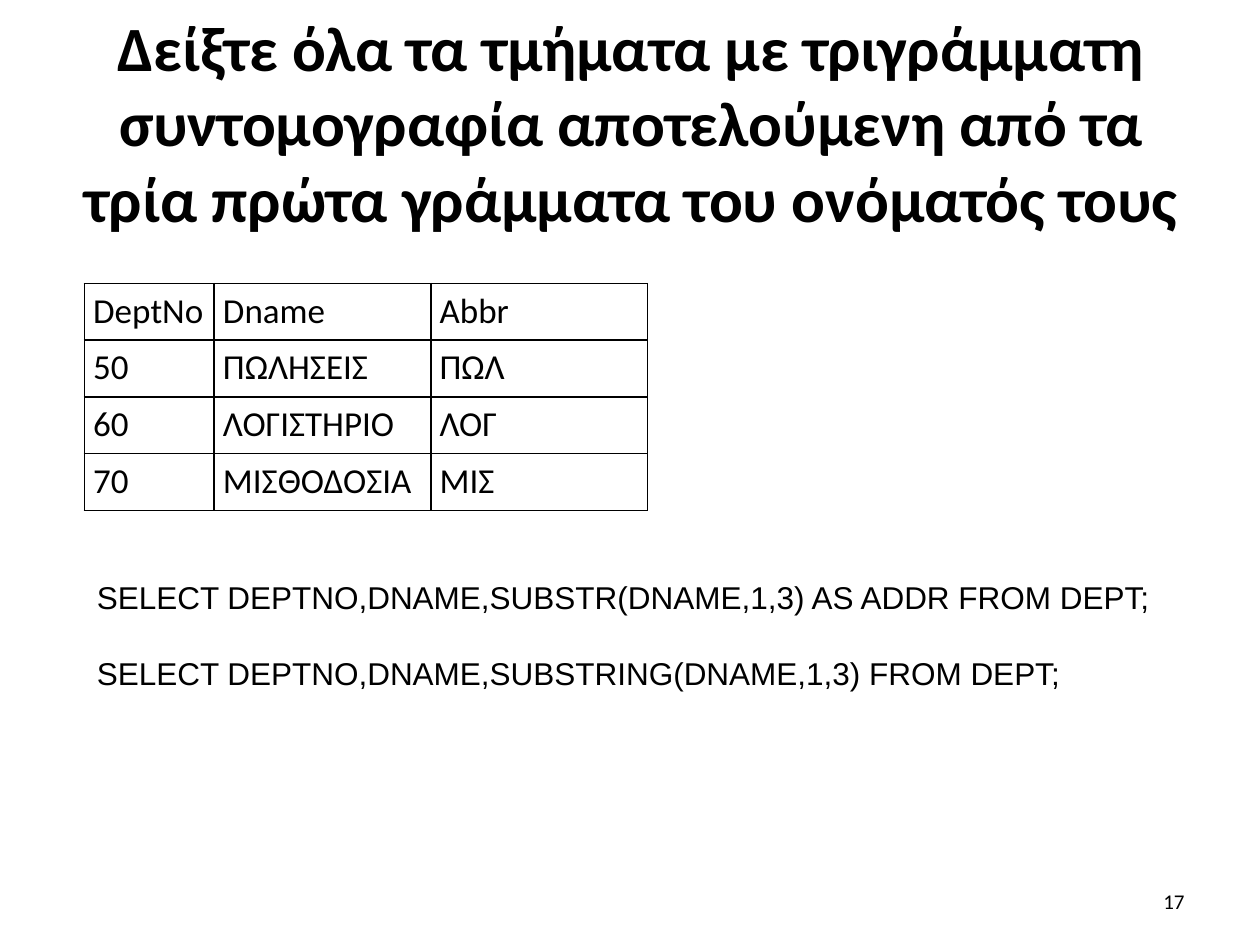
from pptx import Presentation
from pptx.dml.color import RGBColor
from pptx.enum.text import MSO_ANCHOR, PP_ALIGN
from pptx.oxml import parse_xml
from pptx.oxml.ns import nsdecls
from pptx.util import Inches, Pt

LEFT, CENTER, RIGHT = PP_ALIGN.LEFT, PP_ALIGN.CENTER, PP_ALIGN.RIGHT
TOP, MIDDLE = MSO_ANCHOR.TOP, MSO_ANCHOR.MIDDLE

THEME = {
    "ink": "000000",
    "body_font": "Calibri",
    "code_font": "Arial",
    "title": 36,
    "table": 20,
    "code": 18,
    "number": 12,
}

deck = Presentation()
deck.slide_width, deck.slide_height = Inches(10), Inches(7.5)
page = deck.slides.add_slide(deck.slide_layouts[6])


def area(left, top, width, height):
    """Turn percentages of the slide into lengths."""
    across, down = deck.slide_width / 100, deck.slide_height / 100
    return int(left * across), int(top * down), int(width * across), int(height * down)


def write(frame, lines, size, font="body_font", align=LEFT, bold=False, gap=0):
    for index, line in enumerate(lines):
        para = frame.add_paragraph() if index else frame.paragraphs[0]
        para.text = line
        para.alignment = align
        para.space_before = Pt(gap if index else 0)
        para.font.name = THEME[font]
        para.font.size = Pt(THEME[size])
        para.font.bold = bold
        para.font.color.rgb = RGBColor.from_string(THEME["ink"])


# Title, SQL statements and page number
title = ["Δείξτε όλα τα τμήματα με τριγράμματη συντομογραφία "
         "αποτελούμενη από τα τρία πρώτα γράμματα του ονόματός τους"]
queries = ["SELECT DEPTNO,DNAME,SUBSTR(DNAME,1,3) AS ADDR FROM DEPT;",
           "SELECT DEPTNO,DNAME,SUBSTRING(DNAME,1,3) FROM DEPT;"]
texts = [
    (area(5.1, 6.27, 90, 13.2), MIDDLE, title,
     {"size": "title", "align": CENTER, "bold": True}),
    (area(6.7, 60.53, 87.4, 13.47), TOP, queries,
     {"size": "code", "font": "code_font", "gap": 22}),
    (area(71.7, 92.67, 23.3, 5.33), MIDDLE, ["17"],
     {"size": "number", "align": RIGHT}),
]
for place, anchor, lines, style in texts:
    frame = page.shapes.add_textbox(*place).text_frame
    frame.word_wrap = True
    frame.vertical_anchor = anchor
    write(frame, lines, **style)

# Departments table
departments = [
    ("DeptNo", "Dname", "Abbr"),
    ("50", "ΠΩΛΗΣΕΙΣ", "ΠΩΛ"),
    ("60", "ΛΟΓΙΣΤΗΡΙΟ", "ΛΟΓ"),
    ("70", "ΜΙΣΘΟΔΟΣΙΑ", "ΜΙΣ"),
]
table = page.shapes.add_table(len(departments), 3, *area(6.7, 30, 44.7, 24)).table
table.first_row = table.horz_banding = False
for column, share in zip(table.columns, (10.3, 17.2, 17.2)):
    column.width = int(deck.slide_width * share / 100)

for row, values in enumerate(departments):
    for col, value in enumerate(values):
        cell = table.cell(row, col)
        cell.margin_left = cell.margin_right = Inches(0.07)
        cell.margin_top = cell.margin_bottom = 0
        write(cell.text_frame, [value], "table")
        cell.text_frame.paragraphs[0].line_spacing = 1.15
        # Thin border on all four sides, no fill
        properties = cell._tc.get_or_add_tcPr()
        for side in "LRTB":
            properties.append(parse_xml(
                f'<a:ln{side} {nsdecls("a")} w="{Pt(1)}"><a:solidFill>'
                f'<a:srgbClr val="{THEME["ink"]}"/></a:solidFill></a:ln{side}>'))
        cell.fill.background()

deck.save("out.pptx")
